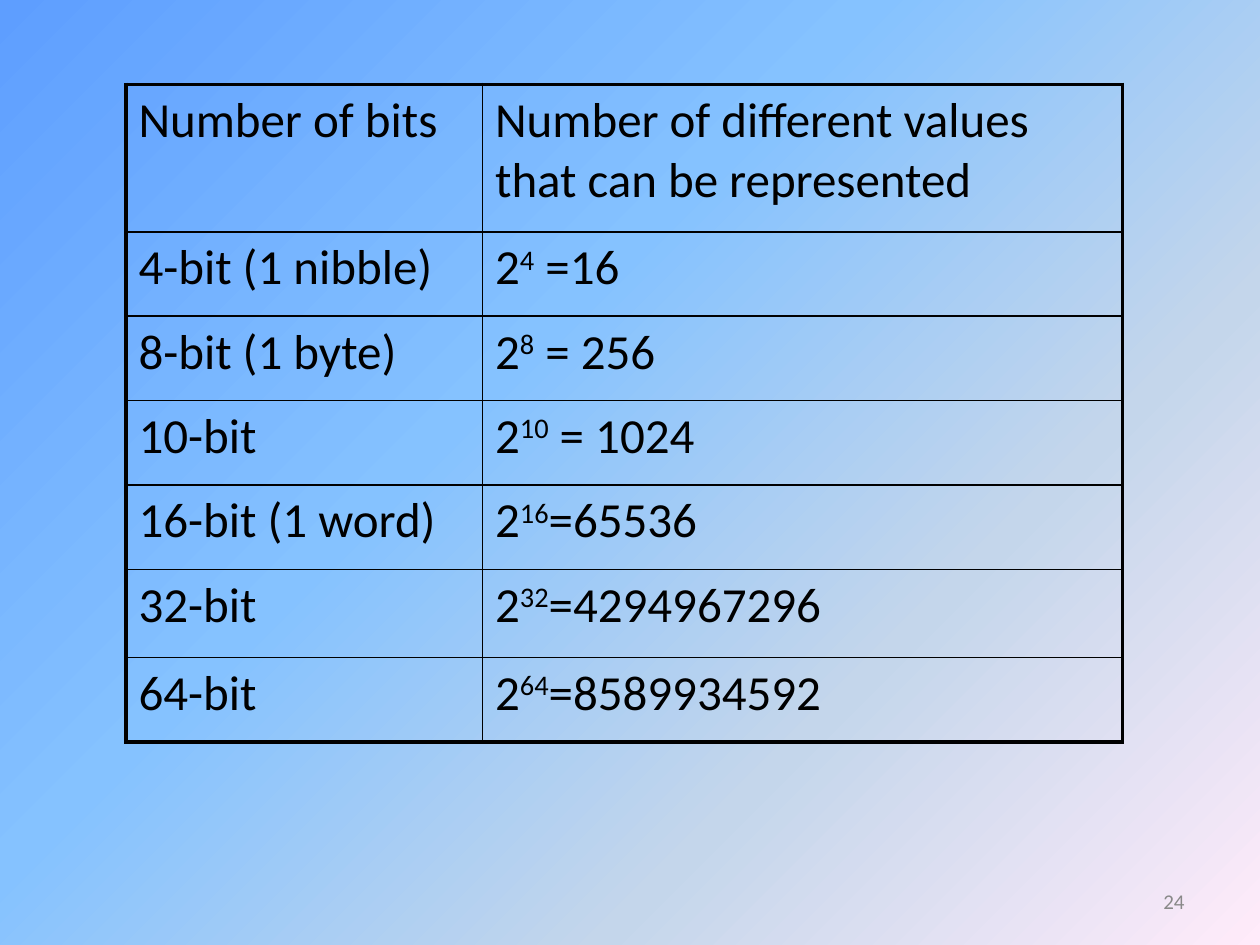
from lxml import etree
from pptx import Presentation
from pptx.dml.color import RGBColor
from pptx.enum.text import MSO_ANCHOR, PP_ALIGN
from pptx.oxml.ns import qn
from pptx.util import Inches, Pt

BLACK = RGBColor(0x00, 0x00, 0x00)
GRAY = RGBColor(0x89, 0x89, 0x89)
BACKGROUND_STOPS = [
    (0, RGBColor(0x5E, 0x9E, 0xFF)),
    (40, RGBColor(0x85, 0xC2, 0xFF)),
    (70, RGBColor(0xC4, 0xD6, 0xEB)),
    (100, RGBColor(0xFF, 0xEB, 0xFA)),
]
FONT = "Calibri"
THICK, THIN = 2.25, 1

HEADINGS = ["Number of bits", "Number of different values that can be represented"]
BIT_ROWS = [
    ("4-bit (1 nibble)", "4", " =16"),
    ("8-bit (1 byte)", "8", " = 256"),
    ("10-bit", "10", " = 1024"),
    ("16-bit (1 word)", "16", "=65536"),
    ("32-bit", "32", "=4294967296"),
    ("64-bit", "64", "=8589934592"),
]
COLUMN_WIDTHS = [2.83, 5.08]
ROW_HEIGHTS = [1.17, 0.67, 0.67, 0.67, 0.67, 0.7, 0.67]


def format_run(run, size, color):
    run.font.name = FONT
    run.font.size = Pt(size)
    run.font.color.rgb = color


def set_borders(cell, widths):
    properties = cell._tc.get_or_add_tcPr()
    for index, (side, width) in enumerate(widths.items()):
        line = etree.Element(qn(f"a:{side}"), w=str(Pt(width)))
        fill = etree.SubElement(line, qn("a:solidFill"))
        etree.SubElement(fill, qn("a:srgbClr"), val=str(BLACK))
        properties.insert(index, line)


presentation = Presentation()
presentation.slide_width = Inches(10)
presentation.slide_height = Inches(7.5)
slide = presentation.slides.add_slide(presentation.slide_layouts[6])

background = slide.background.fill
background.gradient()
background.gradient_angle = 315
stop_list = slide._element.find(".//" + qn("a:gsLst"))
for stop in list(stop_list):
    stop_list.remove(stop)
for position, color in BACKGROUND_STOPS:
    stop = etree.SubElement(stop_list, qn("a:gs"), pos=str(position * 1000))
    etree.SubElement(stop, qn("a:srgbClr"), val=str(color))

number_box = slide.shapes.add_textbox(Inches(7.17), Inches(6.95), Inches(2.33), Inches(0.4))
number_box.text_frame.word_wrap = True
number_box.text_frame.vertical_anchor = MSO_ANCHOR.MIDDLE
paragraph = number_box.text_frame.paragraphs[0]
paragraph.text = "24"
paragraph.alignment = PP_ALIGN.RIGHT
format_run(paragraph.runs[0], 12, GRAY)

table = slide.shapes.add_table(
    len(ROW_HEIGHTS), len(COLUMN_WIDTHS),
    Inches(1), Inches(0.67), Inches(sum(COLUMN_WIDTHS)), Inches(sum(ROW_HEIGHTS)),
).table
table.first_row = False
table.horz_banding = False
for column, width in zip(table.columns, COLUMN_WIDTHS):
    column.width = Inches(width)
for row, height in zip(table.rows, ROW_HEIGHTS):
    row.height = Inches(height)

for column, heading in enumerate(HEADINGS):
    table.cell(0, column).text_frame.text = heading
for row, (bits, exponent, result) in enumerate(BIT_ROWS, start=1):
    table.cell(row, 0).text_frame.text = bits
    paragraph = table.cell(row, 1).text_frame.paragraphs[0]
    for text in ("2", exponent, result):
        paragraph.add_run().text = text
    paragraph.runs[1].font._element.set("baseline", "30000")

last_row, last_column = len(ROW_HEIGHTS) - 1, len(COLUMN_WIDTHS) - 1
for row in range(last_row + 1):
    for column in range(last_column + 1):
        cell = table.cell(row, column)
        cell.fill.background()
        set_borders(cell, {
            "lnL": THICK if column == 0 else THIN,
            "lnR": THICK if column == last_column else THIN,
            "lnT": THICK if row == 0 else THIN,
            "lnB": THICK if row == last_row else THIN,
        })
        for run in cell.text_frame.paragraphs[0].runs:
            format_run(run, 28, BLACK)

presentation.save("out.pptx")
